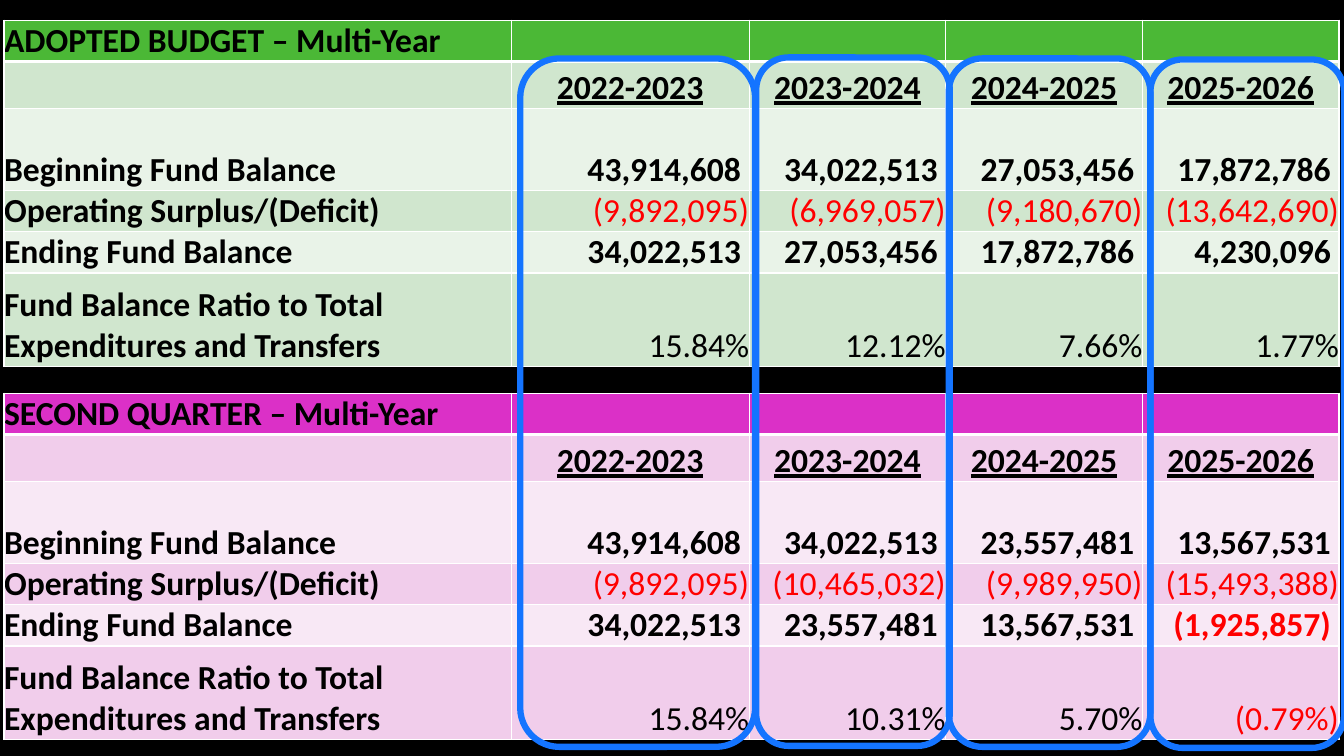
from lxml import etree
from pptx import Presentation
from pptx.dml.color import RGBColor
from pptx.enum.shapes import MSO_SHAPE
from pptx.enum.text import MSO_ANCHOR, PP_ALIGN
from pptx.oxml.ns import qn
from pptx.util import Inches, Pt

ROUNDED = MSO_SHAPE.ROUNDED_RECTANGLE
BOTTOM = MSO_ANCHOR.BOTTOM
LEFT, CENTER, RIGHT = PP_ALIGN.LEFT, PP_ALIGN.CENTER, PP_ALIGN.RIGHT

THEME = {
    "font": "Calibri",
    "size": 24,
    "background": "000000",
    "text": "000000",
    "negative": "FF0000",
    "border": "FFFFFF",
    "outline": "1474FF",
    "green": ("4BB836", "D0E6CE", "E9F3E8"),
    "magenta": ("DB30C7", "F1CDEB", "F8E8F5"),
}

COL_WIDTHS = [5.03, 2.36, 1.95, 1.95, 1.95]
ROW_HEIGHTS = [0.41, 0.47, 0.81, 0.41, 0.41, 0.93]
LABELS = ["", "Beginning Fund Balance", "Operating Surplus/(Deficit)", "Ending Fund Balance",
          "Fund Balance Ratio to Total Expenditures and Transfers"]
YEARS = ["2022-2023", "2023-2024", "2024-2025", "2025-2026"]
YEAR_ROW = 1
BALANCE_ROWS = (2, 4)

BUDGETS = [
    ("ADOPTED BUDGET – Multi-Year", 0.2, "green", [
        YEARS,
        ["43,914,608", "34,022,513", "27,053,456", "17,872,786"],
        ["(9,892,095)", "(6,969,057)", "(9,180,670)", "(13,642,690)"],
        ["34,022,513", "27,053,456", "17,872,786", "4,230,096"],
        ["15.84%", "12.12%", "7.66%", "1.77%"],
    ]),
    ("SECOND QUARTER – Multi-Year", 3.9, "magenta", [
        YEARS,
        ["43,914,608", "34,022,513", "23,557,481", "13,567,531"],
        ["(9,892,095)", "(10,465,032)", "(9,989,950)", "(15,493,388)"],
        ["34,022,513", "23,557,481", "13,567,531", "(1,925,857)"],
        ["15.84%", "10.31%", "5.70%", "(0.79%)"],
    ]),
]

YEAR_FRAMES = [(5.16, 0.58, 2.33), (7.5, 0.57, 1.92), (9.41, 0.58, 2), (11.41, 0.59, 1.92)]
FRAME_HEIGHT = 6.83


def set_borders(cell, widths):
    tc_pr = cell._tc.get_or_add_tcPr()
    for i, (side, width) in enumerate(widths.items()):
        ln = etree.Element(qn(f"a:ln{side}"), w=str(Pt(width)))
        fill = etree.SubElement(ln, qn("a:solidFill"))
        etree.SubElement(fill, qn("a:srgbClr"), val=THEME["border"])
        tc_pr.insert(i, ln)


def set_text(cell, text, align, color, **font_values):
    p = cell.text_frame.paragraphs[0]
    p.alignment = align
    r = p.add_run()
    r.text = text
    values = {"name": THEME["font"], "size": Pt(THEME["size"]), **font_values}
    for name, value in values.items():
        setattr(r.font, name, value)
    r.font.color.rgb = RGBColor.from_string(color)


prs = Presentation()
prs.slide_width, prs.slide_height = Inches(13.33), Inches(7.5)
s = prs.slides.add_slide(prs.slide_layouts[6])
s.background.fill.solid()
s.background.fill.fore_color.rgb = RGBColor.from_string(THEME["background"])

for title, top, palette, values in BUDGETS:
    header_fill, dark_fill, light_fill = THEME[palette]
    rows = [[title, "", "", "", ""]] + [[label, *row] for label, row in zip(LABELS, values)]
    table = s.shapes.add_table(len(rows), len(COL_WIDTHS), Inches(0.04), Inches(top),
                               Inches(sum(COL_WIDTHS)), Inches(sum(ROW_HEIGHTS))).table
    for column, width in zip(table.columns, COL_WIDTHS):
        column.width = Inches(width)
    for row, height in zip(table.rows, ROW_HEIGHTS):
        row.height = Inches(height)

    for i, row in enumerate(rows):
        row_fill = header_fill if i == 0 else dark_fill if i % 2 else light_fill
        for j, text in enumerate(row):
            cell = table.cell(i, j)
            is_balance = i in BALANCE_ROWS and j > 0
            margins = {"margin_left": 0, "margin_top": 0, "margin_bottom": 0,
                       "margin_right": 0.08 if is_balance else 0}
            for name, margin in margins.items():
                setattr(cell, name, Inches(margin))
            cell.vertical_anchor = BOTTOM
            cell.fill.solid()
            cell.fill.fore_color.rgb = RGBColor.from_string(row_fill)
            set_borders(cell, {"L": 1, "R": 1, "T": 3 if i == 1 else 1, "B": 3 if i == 0 else 1})
            if text:
                is_year = i == YEAR_ROW
                align = LEFT if j == 0 else CENTER if is_year else RIGHT
                color = THEME["negative" if text.startswith("(") else "text"]
                set_text(cell, text, align, color, underline=is_year,
                         bold=j == 0 or is_year or is_balance)

for left, top, width in YEAR_FRAMES:
    sp = s.shapes.add_shape(ROUNDED, Inches(left), Inches(top), Inches(width), Inches(FRAME_HEIGHT))
    sp.shadow.inherit = False
    sp.fill.background()
    sp.line.color.rgb = RGBColor.from_string(THEME["outline"])
    sp.line.width = Pt(4.5)

prs.save("out.pptx")
